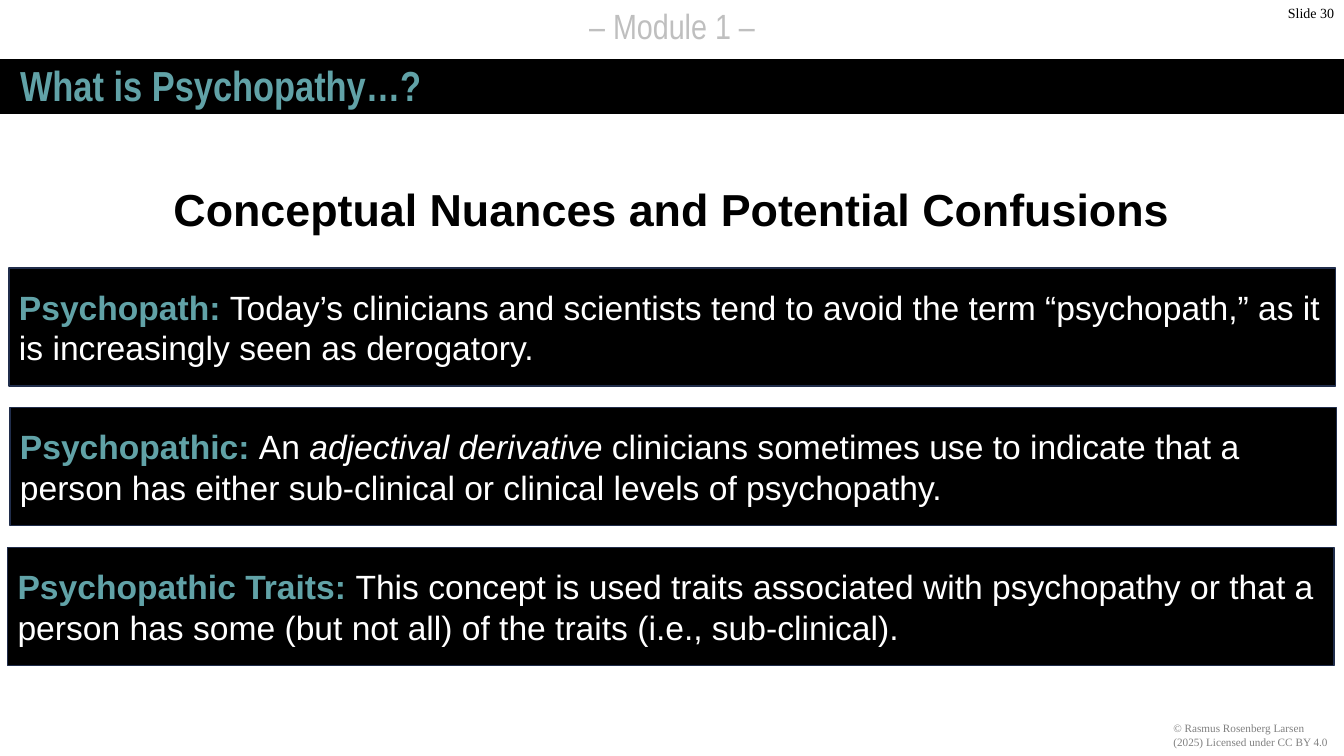
import pptx
import pptx.util
import pptx.dml.color
import pptx.enum.shapes
import pptx.enum.text

Pt = pptx.util.Pt
ALIGN = pptx.enum.text.PP_ALIGN
ANCHOR = pptx.enum.text.MSO_ANCHOR
COLORS = {"black": "000000", "white": "FFFFFF", "teal": "61A2A7",
          "navy": "202D4B", "silver": "BFBFBF", "gray": "808080"}


def color(name):
    return pptx.dml.color.RGBColor.from_string(COLORS[name])


def write(par, text, size=24, face="Arial", ink="black", bold=False, italic=False):
    run = par.add_run()
    run.text = text
    font = run.font
    font.size, font.name = Pt(size), face
    font.bold, font.italic = bold, italic
    font.color.rgb = color(ink)


class Deck:
    narrow = "Arial Narrow"
    serif = "Times New Roman"

    def __init__(self, wide, high):
        self.file = pptx.Presentation()
        self.file.slide_width, self.file.slide_height = Pt(wide), Pt(high)
        self.slide = self.file.slides.add_slide(self.file.slide_layouts[6])

    def bar(self, x, y, w, h, line="black"):
        kind = pptx.enum.shapes.MSO_SHAPE.RECTANGLE
        box = self.slide.shapes.add_shape(kind, Pt(x), Pt(y), Pt(w), Pt(h))
        box.shadow.inherit = False
        box.fill.solid()
        box.fill.fore_color.rgb = color("black")
        box.line.color.rgb = color(line)
        box.line.width = Pt(1)
        return box

    def label(self, x, y, w, h, text, align=ALIGN.LEFT, anchor=ANCHOR.TOP,
              space=1.0, **style):
        box = self.slide.shapes.add_textbox(Pt(x), Pt(y), Pt(w), Pt(h))
        frame = box.text_frame
        frame.word_wrap = True
        frame.vertical_anchor = anchor
        par = frame.paragraphs[0]
        par.alignment = align
        par.line_spacing = space
        write(par, text, **style)

    def panel(self, x, y, w, h, term, parts):
        frame = self.bar(x, y, w, h, line="navy").text_frame
        frame.word_wrap = True
        frame.vertical_anchor = ANCHOR.MIDDLE
        par = frame.paragraphs[0]
        par.alignment = ALIGN.LEFT
        write(par, term + ": ", ink="teal", bold=True)
        for text, italic in parts:
            write(par, text, ink="white", italic=italic)


def main():
    deck = Deck(960, 540)

    # Header band, module name and licence
    deck.bar(0, 42.5, 960, 38.2)
    deck.label(0, 0, 960, 37.4, "– Module 1 –", align=ALIGN.CENTER,
               size=25, face=deck.narrow, ink="silver")
    deck.label(831, 512, 129, 26.6,
               "© Rasmus Rosenberg Larsen (2025) Licensed under CC BY 4.0",
               size=8, face=deck.serif, ink="gray")

    # Title, heading and slide number
    deck.label(7.2, 33.8, 946.8, 58.3, "What is Psychopathy…?", anchor=ANCHOR.MIDDLE,
               space=0.9, size=30, face=deck.narrow, ink="teal", bold=True)
    deck.label(6.5, 126, 946.8, 44, "Conceptual Nuances and Potential Confusions",
               align=ALIGN.CENTER, size=32, bold=True)
    deck.label(744, 0, 216, 28.8, "Slide 30", align=ALIGN.RIGHT,
               size=10, face=deck.serif)

    # Definitions
    terms = [
        (6.5, "Psychopath",
         [("Today’s clinicians and scientists tend to avoid the term “psychopath,” "
           "as it is increasingly seen as derogatory.", False)]),
        (7.2, "Psychopathic",
         [("An ", False), ("adjectival derivative", True),
          (" clinicians sometimes use to indicate that a person has either "
           "sub-clinical or clinical levels of psychopathy.", False)]),
        (5.5, "Psychopathic Traits",
         [("This concept is used traits associated with psychopathy or that a person "
           "has some (but not all) of the traits (i.e., sub-clinical).", False)]),
    ]
    for row, (left, term, parts) in enumerate(terms):
        deck.panel(left, 191.5 + 99.8 * row, 947.5, 84.2, term, parts)

    deck.file.save("out.pptx")


if __name__ == "__main__":
    main()
